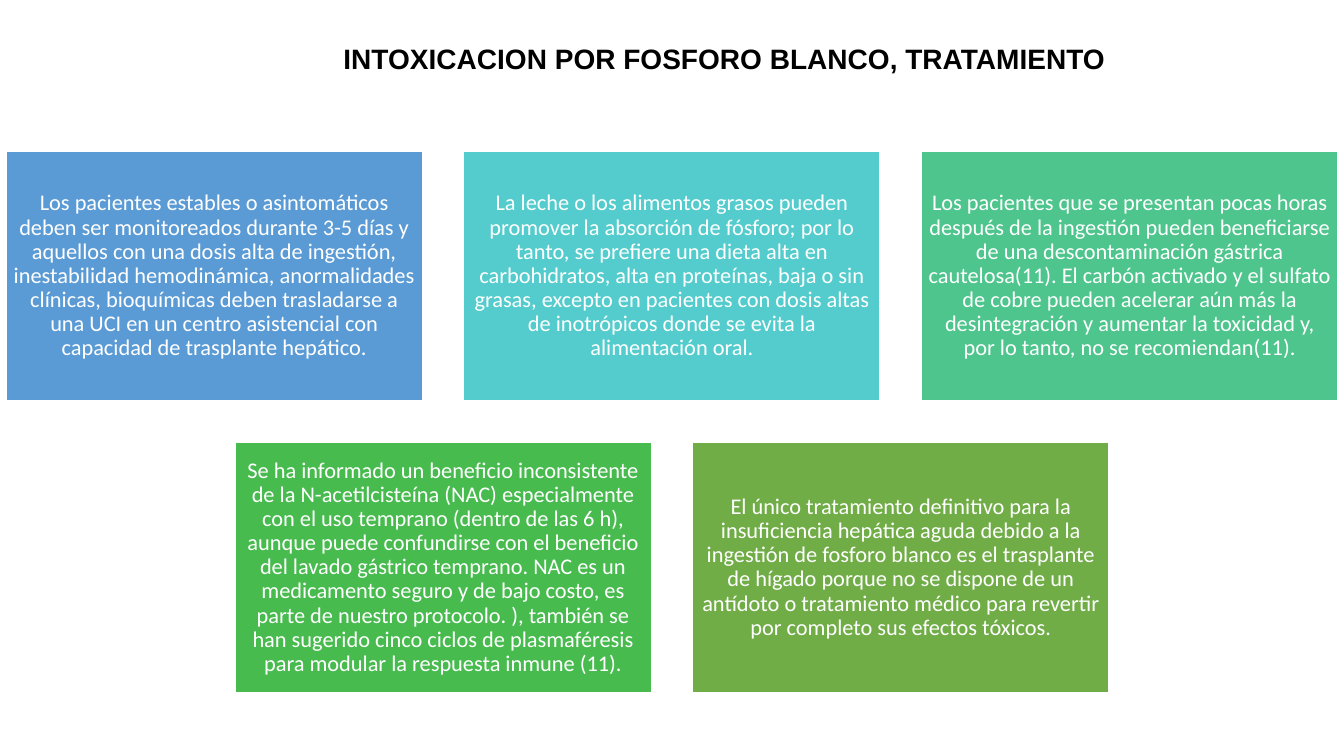
"""Build the slide on treatment of white phosphorus poisoning."""
from pptx import Presentation
from pptx import util as u
from pptx.dml.color import RGBColor
from pptx.enum import shapes, text

PX = 9144
SLIDE_W, SLIDE_H = 1333, 750
CARD_W, CARD_H = 413, 248
PITCH_X, PITCH_Y = 454, 289
GRID_LEFT, GRID_TOP = 6, 150
COLUMNS = 3
INSET = 7

WHITE = RGBColor(0xFF, 0xFF, 0xFF)
BLACK = RGBColor(0x00, 0x00, 0x00)
BLUE = RGBColor(0x5B, 0x9B, 0xD5)
TURQUOISE = RGBColor(0x54, 0xCC, 0xCD)
MINT = RGBColor(0x4D, 0xC5, 0x8D)
GREEN = RGBColor(0x48, 0xBB, 0x4F)
OLIVE = RGBColor(0x70, 0xAD, 0x47)

HEADING = "INTOXICACION POR FOSFORO BLANCO, TRATAMIENTO"
TREATMENTS = [
    (BLUE, "Los pacientes estables o asintomáticos deben ser monitoreados durante 3-5 días y "
           "aquellos con una dosis alta de ingestión, inestabilidad hemodinámica, anormalidades "
           "clínicas, bioquímicas deben trasladarse a una UCI en un centro asistencial con "
           "capacidad de trasplante hepático."),
    (TURQUOISE, "La leche o los alimentos grasos pueden promover la absorción de fósforo; por lo "
                "tanto, se prefiere una dieta alta en carbohidratos, alta en proteínas, baja o sin "
                "grasas, excepto en pacientes con dosis altas de inotrópicos donde se evita la "
                "alimentación oral."),
    (MINT, "Los pacientes que se presentan pocas horas después de la ingestión pueden "
           "beneficiarse de una descontaminación gástrica cautelosa(11). El carbón activado y el "
           "sulfato de cobre pueden acelerar aún más la desintegración y aumentar la toxicidad y, "
           "por lo tanto, no se recomiendan(11)."),
    (GREEN, "Se ha informado un beneficio inconsistente de la N-acetilcisteína (NAC) "
            "especialmente con el uso temprano (dentro de las 6 h), aunque puede confundirse con "
            "el beneficio del lavado gástrico temprano. NAC es un medicamento seguro y de bajo "
            "costo, es parte de nuestro protocolo. ), también se han sugerido cinco ciclos de "
            "plasmaféresis para modular la respuesta inmune (11)."),
    (OLIVE, "El único tratamiento definitivo para la insuficiencia hepática aguda debido a la "
            "ingestión de fosforo blanco es el trasplante de hígado porque no se dispone de un "
            "antídoto o tratamiento médico para revertir por completo sus efectos tóxicos."),
]

HEADING_FONT = {"name": "Arial", "size": u.Pt(20), "bold": True}
CARD_FONT = {"name": "Calibri", "size": u.Pt(16), "bold": False}
HEADING_FRAME = {"word_wrap": True, "auto_size": text.MSO_AUTO_SIZE.NONE,
                 "vertical_anchor": text.MSO_ANCHOR.TOP}
CARD_FRAME = {"word_wrap": True, "vertical_anchor": text.MSO_ANCHOR.MIDDLE,
              **{f"margin_{side}": INSET * PX for side in ("left", "top", "right", "bottom")}}
HEADING_PARAGRAPH = {"alignment": text.PP_ALIGN.CENTER, "line_spacing": 1.07,
                     "space_after": u.Pt(8)}
CARD_PARAGRAPH = {"alignment": text.PP_ALIGN.CENTER, "line_spacing": 0.9}


def apply(target, values):
    """Set each named attribute on the target."""
    for name, value in values.items():
        setattr(target, name, value)


def write(frame, wording, color, frame_values, paragraph_values, font_values):
    """Fill a text frame with one formatted paragraph."""
    apply(frame, frame_values)
    paragraph = frame.paragraphs[0]
    run = paragraph.add_run()
    run.text = wording
    apply(paragraph, paragraph_values)
    apply(run.font, font_values)
    run.font.color.rgb = color


def add_heading(slide):
    """Place and fill the title placeholder."""
    heading = slide.shapes.title
    apply(heading, {"left": 282 * PX, "top": 34 * PX, "width": 873 * PX, "height": 44 * PX})
    write(heading.text_frame, HEADING, BLACK, HEADING_FRAME, HEADING_PARAGRAPH, HEADING_FONT)


def add_card(slide, left, top, fill, wording):
    """Draw one coloured treatment card."""
    card = slide.shapes.add_shape(shapes.MSO_SHAPE.RECTANGLE,
                                  left * PX, top * PX, CARD_W * PX, CARD_H * PX)
    card.shadow.inherit = False
    card.fill.solid()
    card.fill.fore_color.rgb = fill
    card.line.color.rgb = WHITE
    card.line.width = u.Pt(1)
    write(card.text_frame, wording, WHITE, CARD_FRAME, CARD_PARAGRAPH, CARD_FONT)


def add_treatments(slide):
    """Lay the cards out in rows, centring a short row."""
    for start in range(0, len(TREATMENTS), COLUMNS):
        row = TREATMENTS[start:start + COLUMNS]
        row_left = GRID_LEFT + (COLUMNS - len(row)) * PITCH_X // 2
        top = GRID_TOP + start // COLUMNS * PITCH_Y
        for column, (fill, wording) in enumerate(row):
            add_card(slide, row_left + column * PITCH_X, top, fill, wording)


def main():
    """Create and save the presentation."""
    deck = Presentation()
    apply(deck, {"slide_width": SLIDE_W * PX, "slide_height": SLIDE_H * PX})
    slide = deck.slides.add_slide(deck.slide_layouts[5])
    add_heading(slide)
    add_treatments(slide)
    deck.save("out.pptx")


if __name__ == "__main__":
    main()
